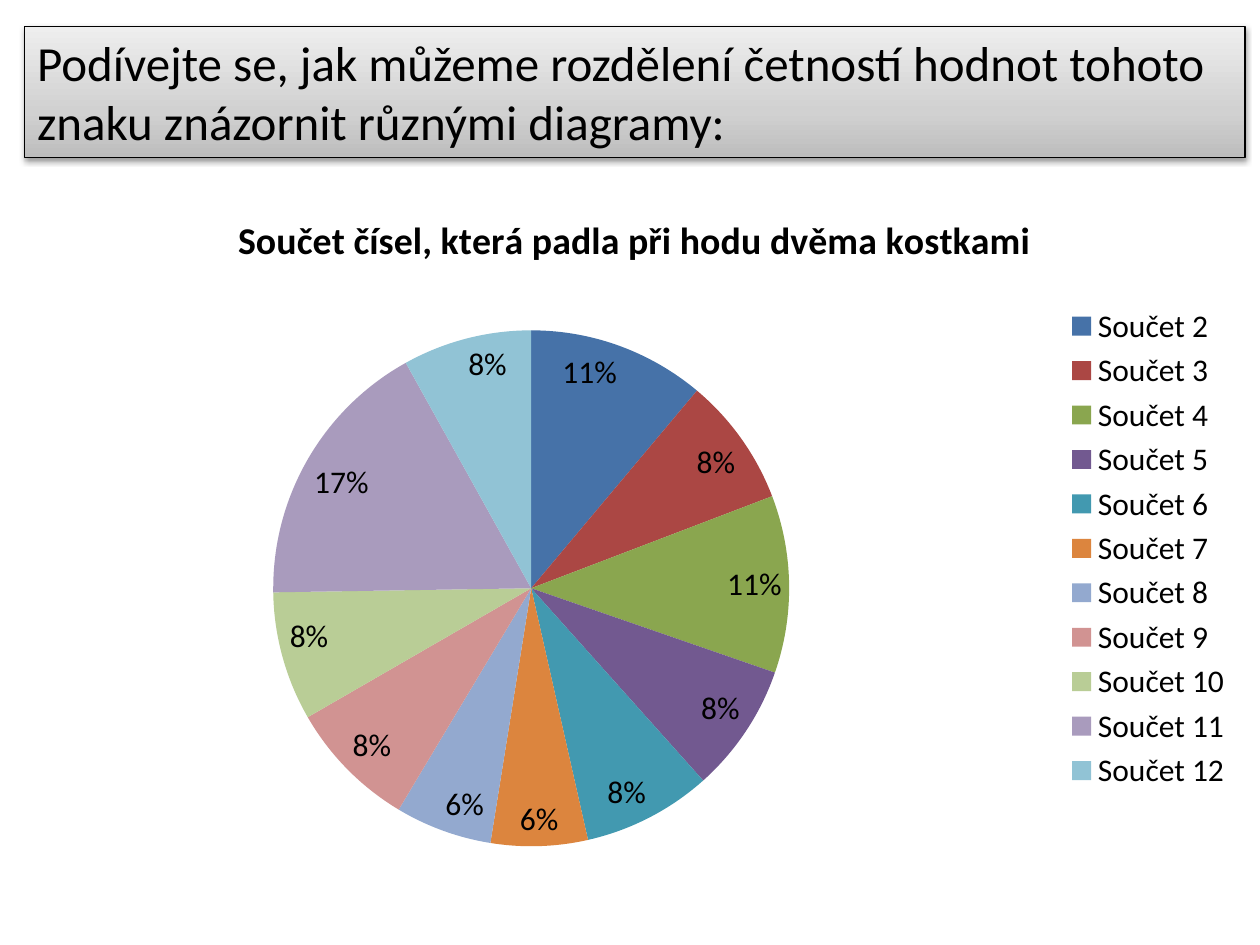
from lxml.etree import SubElement
from pptx import Presentation
from pptx.chart.data import CategoryChartData
from pptx.dml.color import RGBColor
from pptx.enum.chart import XL_CHART_TYPE, XL_LABEL_POSITION, XL_LEGEND_POSITION
from pptx.enum.shapes import MSO_SHAPE
from pptx.enum.text import MSO_ANCHOR, PP_ALIGN
from pptx.oxml import parse_xml
from pptx.oxml.ns import nsdecls, qn
from pptx.util import Cm, Pt

COLORS = {
    "text": "000000",
    "banner_bottom": "BDBDBD",
    "banner_middle": "D1D1D1",
    "banner_top": "EEEEEE",
}
SLICES = {
    2: (11, "4672A8"),
    3: (8, "AB4744"),
    4: (11, "8AA64F"),
    5: (8, "725990"),
    6: (8, "4299B0"),
    7: (6, "DC853E"),
    8: (6, "93A9CF"),
    9: (8, "D19392"),
    10: (8, "B9CD96"),
    11: (17, "A99BBD"),
    12: (8, "91C3D5"),
}
TITLE = "Součet čísel, která padla při hodu dvěma kostkami"


def set_font(font, size, bold=False):
    font.name = "Calibri"
    font.size = Pt(size)
    font.bold = bold
    font.color.rgb = RGBColor.from_string(COLORS["text"])


def write_text(frame, *lines, size, bold=False, align=PP_ALIGN.LEFT):
    for index, line in enumerate(lines):
        paragraph = frame.add_paragraph() if index else frame.paragraphs[0]
        paragraph.alignment = align
        run = paragraph.add_run()
        run.text = line
        set_font(run.font, size, bold)


def add_banner(slide, left, top, width, height):
    banner = slide.shapes.add_shape(MSO_SHAPE.RECTANGLE, left, top, width, height)
    banner.line.color.rgb = RGBColor.from_string(COLORS["text"])
    banner.line.width = Pt(0.75)
    banner.fill.gradient()
    banner.fill.gradient_angle = 90
    properties = banner._element.spPr
    stops = properties.find(".//" + qn("a:gsLst"))
    stops.clear()
    for percent, name in ((0, "banner_bottom"), (35, "banner_middle"), (100, "banner_top")):
        stop = SubElement(stops, qn("a:gs"), pos=str(percent * 1000))
        SubElement(stop, qn("a:srgbClr"), val=COLORS[name])

    banner.shadow.inherit = False
    properties.find(qn("a:effectLst")).append(parse_xml(
        f'<a:outerShdw {nsdecls("a")} blurRad="40000" dist="20000" dir="5400000" '
        f'rotWithShape="0"><a:srgbClr val="{COLORS["text"]}">'
        '<a:alpha val="38000"/></a:srgbClr></a:outerShdw>'
    ))

    banner.text_frame.word_wrap = True
    banner.text_frame.vertical_anchor = MSO_ANCHOR.TOP
    write_text(
        banner.text_frame,
        "Podívejte se, jak můžeme rozdělení četností hodnot tohoto",
        "znaku znázornit různými diagramy:",
        size=28,
    )


def place_plot(chart, x, y, w, h):
    plot_area = chart._chartSpace.chart.plotArea
    for layout in plot_area.findall(qn("c:layout")):
        plot_area.remove(layout)
    plot_area.insert(0, parse_xml(
        f'<c:layout {nsdecls("c")}><c:manualLayout><c:layoutTarget val="inner"/>'
        '<c:xMode val="edge"/><c:yMode val="edge"/>'
        f'<c:x val="{x}"/><c:y val="{y}"/><c:w val="{w}"/><c:h val="{h}"/>'
        '</c:manualLayout></c:layout>'
    ))


def add_pie(slide, left, top, width, height):
    sums = CategoryChartData()
    sums.categories = [f"Součet {total}" for total in SLICES]
    sums.add_series(TITLE, [share for share, _ in SLICES.values()])
    chart = slide.shapes.add_chart(
        XL_CHART_TYPE.PIE, left, top, width, height, sums
    ).chart
    set_font(chart.font, 18)

    chart.has_title = True
    write_text(chart.chart_title.text_frame, TITLE, size=21.6, bold=True, align=PP_ALIGN.CENTER)
    chart.chart_title.include_in_layout = False
    chart.has_legend = True
    chart.legend.position = XL_LEGEND_POSITION.RIGHT
    chart.legend.include_in_layout = False
    set_font(chart.legend.font, 18)

    pie = chart.plots[0]
    pie.vary_by_categories = True
    for index, (_, color) in enumerate(SLICES.values()):
        fill = pie.series[0].points[index].format.fill
        fill.solid()
        fill.fore_color.rgb = RGBColor.from_string(color)

    pie.has_data_labels = True
    labels = pie.data_labels
    labels.show_percentage = True
    labels.show_value = False
    labels.number_format = "0%"
    labels.number_format_is_linked = False
    labels.position = XL_LABEL_POSITION.INSIDE_END
    set_font(labels.font, 18)
    place_plot(chart, x=0.2, y=0.2, w=0.43, h=0.71)


def main():
    presentation = Presentation()
    presentation.slide_width = Cm(25.4)
    presentation.slide_height = Cm(19.05)
    slide = presentation.slides.add_slide(presentation.slide_layouts[6])
    margin, content_width = Cm(0.5), Cm(24.6)
    add_banner(slide, margin, Cm(0.53), content_width, Cm(2.65))
    add_pie(slide, margin, Cm(3.73), content_width, Cm(14.65))
    presentation.save("out.pptx")


if __name__ == "__main__":
    main()
